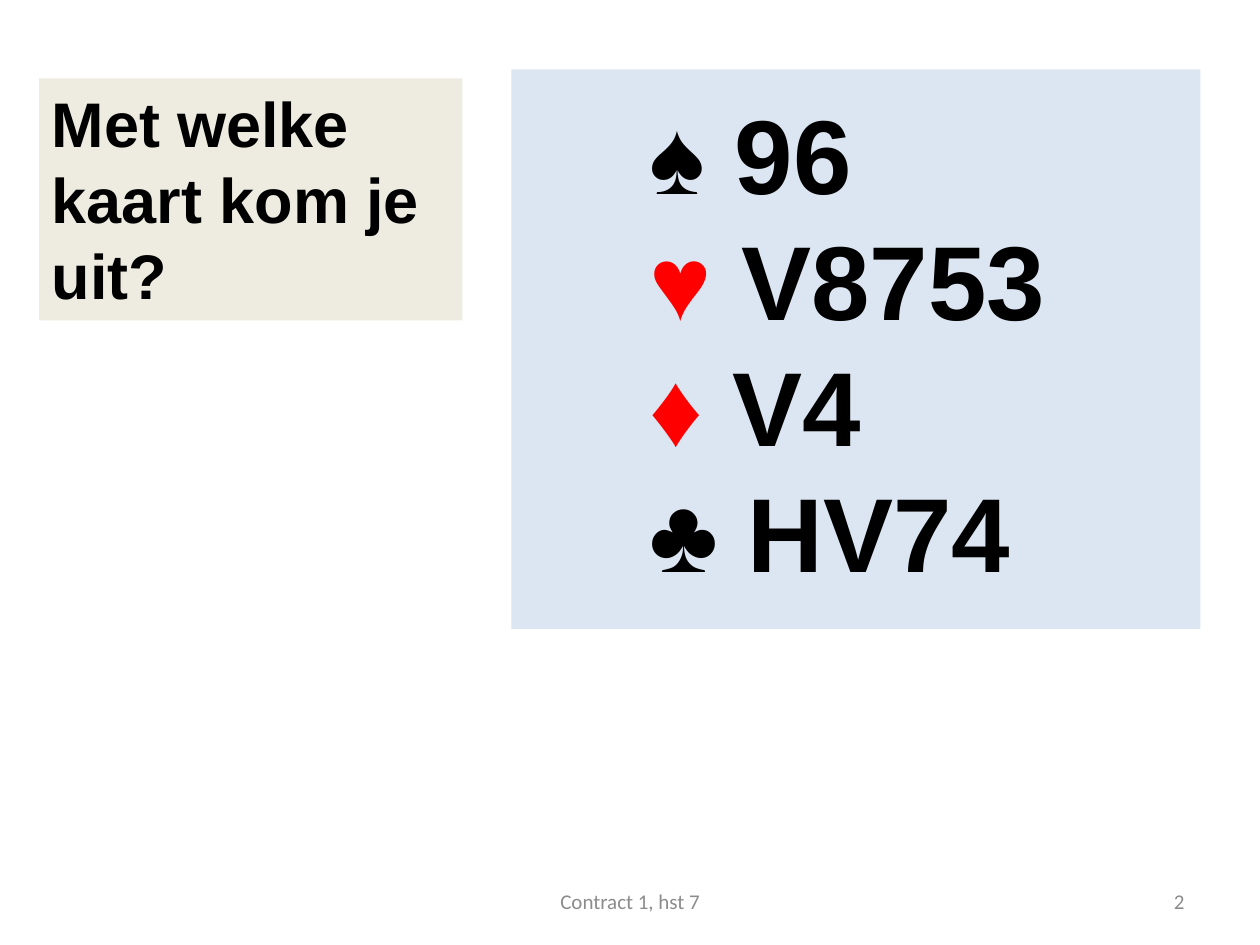
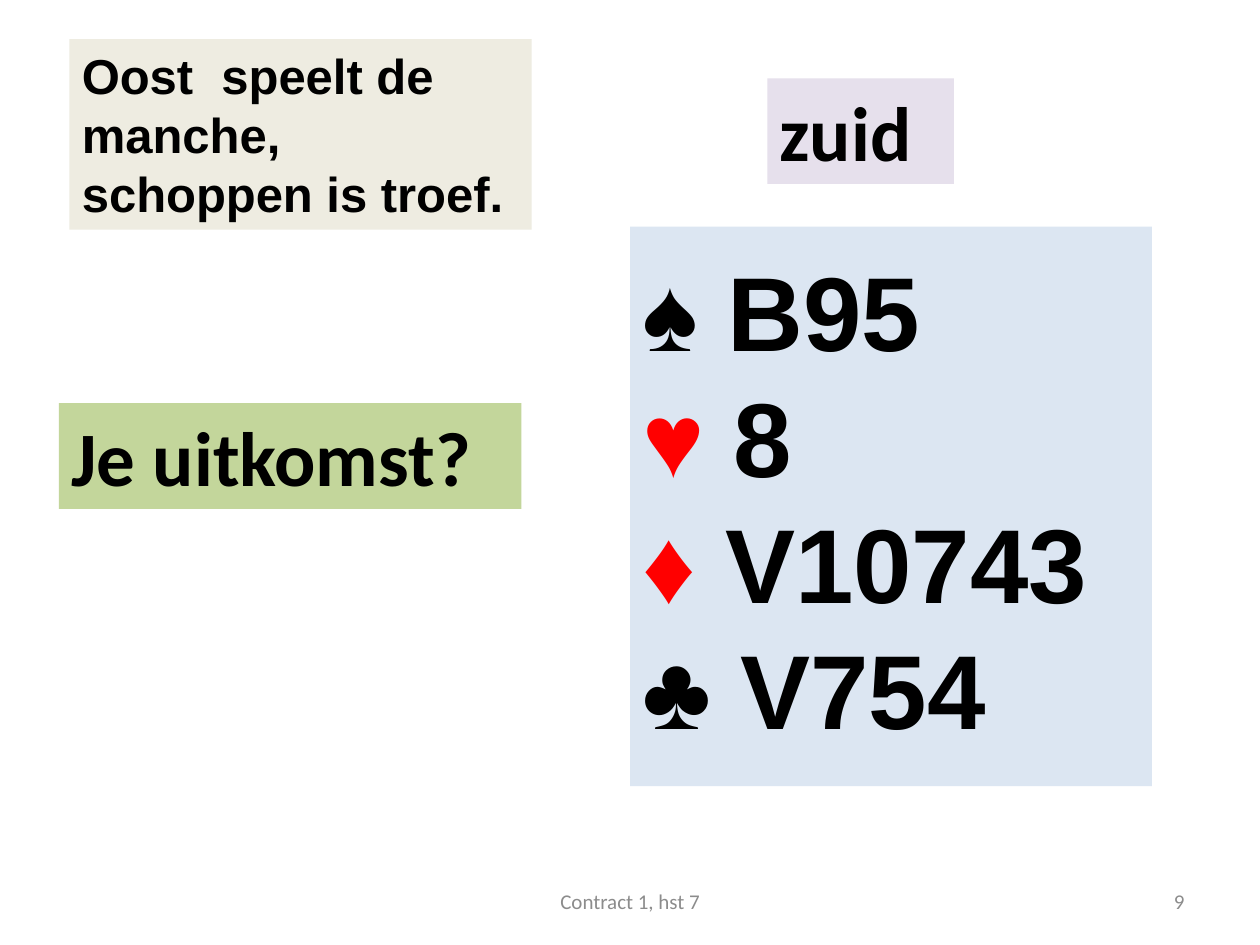
"""Build two bridge quiz slides about the opening lead."""
from pptx import Presentation
from pptx.dml.color import RGBColor
from pptx.enum.shapes import MSO_SHAPE as Shape
from pptx.enum.text import MSO_ANCHOR as Anchor, MSO_AUTO_SIZE as AutoSize, PP_ALIGN as Align
from pptx.util import Cm, Pt
from lxml import etree

COLOURS = {"black": "000000", "red": "FF0000", "grey": "8C8C8C", "hand": "DCE6F2",
           "question": "EEECE1", "lead": "C3D69B", "seat": "E6E0EC"}
SUITS = [("♠", "black"), ("♥", "red"), ("♦", "red"), ("♣", "black")]
FOOTER = "Contract 1, hst 7"
FOOTER_TOP, FOOTER_HEIGHT = 17.65, 1.02

SLIDES = [
    {"number": "2",
     "question": ("Met welke kaart kom je uit?", 36, (0.79, 1.58, 8.53, 4.88)),
     "hand": (["96", "V8753", "V4", "HV74"], 2.54, (10.31, 1.4, 13.89, 11.28)),
     "labels": []},
    {"number": "9",
     "question": ("Oost\t speelt de manche, schoppen is troef.", 28, (1.4, 0.79, 9.32, 3.84)),
     "hand": (["B95", "8", "V10743", "V754"], 0, (12.7, 4.57, 10.52, 11.28)),
     "labels": [("Je uitkomst?", "lead", (1.19, 8.13, 9.32, 2.13)),
                ("zuid", "seat", (15.47, 1.58, 3.76, 2.13))]},
]


def colour(name):
    return RGBColor.from_string(COLOURS[name])


def set_values(target, values):
    for name, value in values.items():
        setattr(target, name, value)


def place(shape, box, fill=None):
    set_values(shape, dict(zip(("left", "top", "width", "height"), map(Cm, box))))
    if fill:
        shape.fill.solid()
        shape.fill.fore_color.rgb = colour(fill)


def prepare_frame(shape, top=0.13, bottom=0.13, anchor=Anchor.TOP):
    frame = shape.text_frame
    set_values(frame, {"word_wrap": True, "auto_size": AutoSize.NONE, "vertical_anchor": anchor,
                       "margin_left": Cm(0.25), "margin_right": Cm(0.25),
                       "margin_top": Cm(top), "margin_bottom": Cm(bottom)})
    return frame


def write(paragraph, text, size, font="Arial", ink="black", bold=True, align=Align.LEFT):
    paragraph.alignment = align
    run = paragraph.add_run()
    run.text = text
    set_values(run.font, {"name": font, "size": Pt(size), "bold": bold})
    run.font.color.rgb = colour(ink)


def add_question(slide, text, size, box):
    title = slide.shapes.title
    place(title, box, "question")
    write(prepare_frame(title).paragraphs[0], text, size)


def add_hand(slide, cards, indent, box):
    body = slide.placeholders[1]
    place(body, box, "hand")
    frame = prepare_frame(body, 0.4, 0.6)
    for index, ((suit, ink), ranks) in enumerate(zip(SUITS, cards)):
        paragraph = frame.add_paragraph() if index else frame.paragraphs[0]
        paragraph.space_before = Pt(0)
        write(paragraph, suit, 60, ink=ink)
        write(paragraph, f" {ranks}", 60)
        properties = paragraph._p.get_or_add_pPr()
        properties.set("marL", str(Cm(indent)))
        properties.set("indent", "0")
        namespace = properties.nsmap["a"]
        etree.SubElement(properties, f"{{{namespace}}}buNone")


def add_label(slide, text, fill, box):
    label = slide.shapes.add_shape(Shape.RECTANGLE, *map(Cm, box))
    label.shadow.inherit = False
    label.line.fill.background()
    place(label, box, fill)
    write(prepare_frame(label).paragraphs[0], text, 44, font="Calibri")


def add_footer(slide, text, left, width, align):
    footer = slide.shapes.add_textbox(*map(Cm, (left, FOOTER_TOP, width, FOOTER_HEIGHT)))
    frame = prepare_frame(footer, anchor=Anchor.MIDDLE)
    write(frame.paragraphs[0], text, 12, "Calibri", "grey", False, align)


def main():
    presentation = Presentation()
    set_values(presentation, {"slide_width": Cm(25.4), "slide_height": Cm(19.05)})
    for content in SLIDES:
        slide = presentation.slides.add_slide(presentation.slide_layouts[1])
        add_hand(slide, *content["hand"])
        add_question(slide, *content["question"])
        for label in content["labels"]:
            add_label(slide, *label)
        add_footer(slide, content["number"], 18.2, 5.93, Align.RIGHT)
        add_footer(slide, FOOTER, 8.68, 8.05, Align.CENTER)
    presentation.save("out.pptx")


if __name__ == "__main__":
    main()
